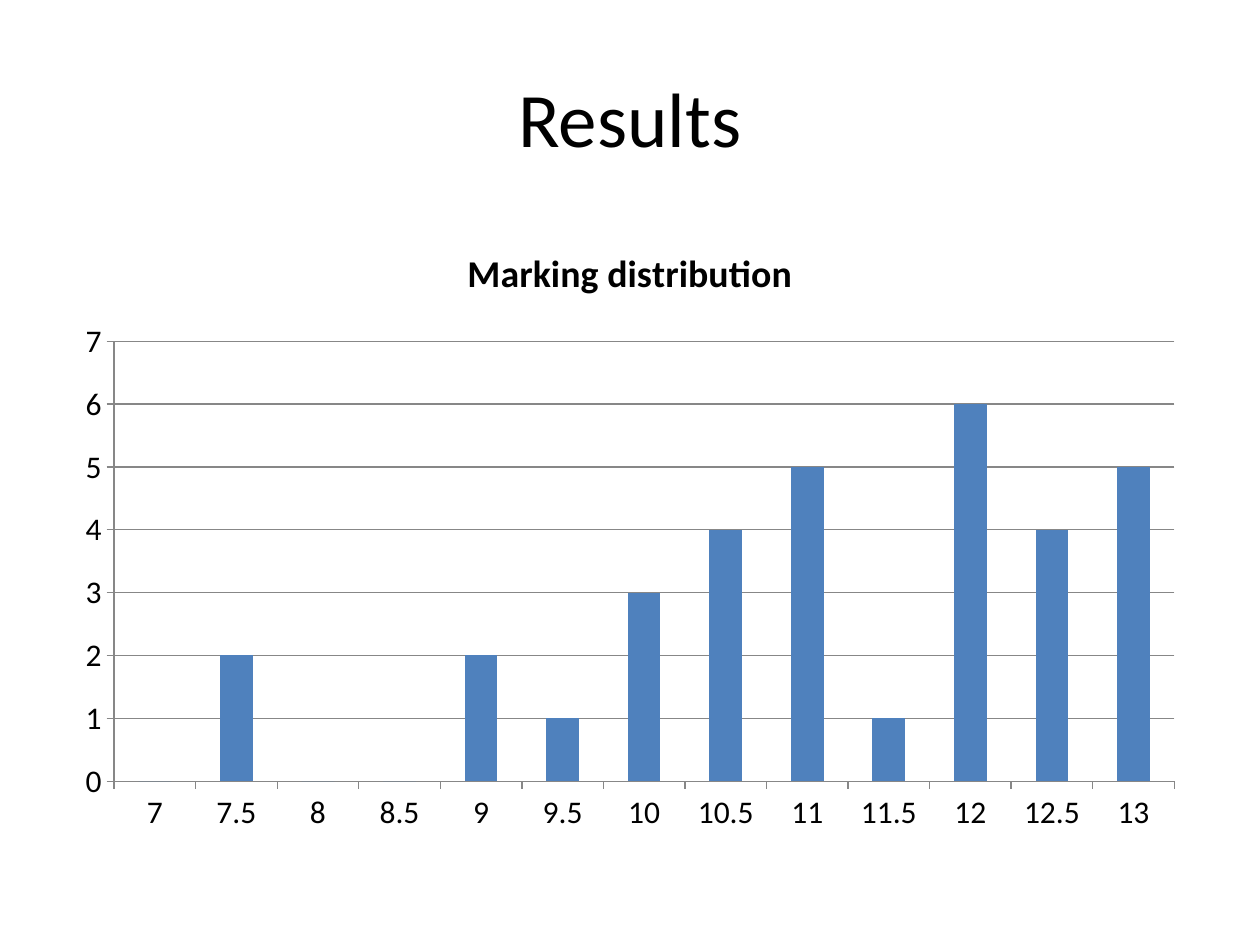
"""Build the results slide with its marking distribution chart."""
import pptx
import pptx.chart.data
import pptx.dml.color
import pptx.enum.chart
import pptx.enum.text
import pptx.util

Pt = pptx.util.Pt
TITLE = "Results"
CHART_TITLE = "Marking distribution"
MARKS = [
    ("7", 0), ("7.5", 2), ("8", 0), ("8.5", 0), ("9", 2), ("9.5", 1), ("10", 3),
    ("10.5", 4), ("11", 5), ("11.5", 1), ("12", 6), ("12.5", 4), ("13", 5),
]
COLORS = {"text": "000000", "bar": "4F81BD", "line": "878787"}
FONT = "Calibri"
MARGIN, WIDTH = 36, 648


def rgb(name):
    return pptx.dml.color.RGBColor.from_string(COLORS[name])


def style_font(font, size, bold=False):
    font.name = FONT
    font.size = Pt(size)
    font.bold = bold
    font.color.rgb = rgb("text")


def style_line(line):
    line.color.rgb = rgb("line")
    line.width = Pt(0.75)


def add_title(slide):
    sp = slide.shapes.add_textbox(Pt(MARGIN), Pt(21.6), Pt(WIDTH), Pt(90))
    tf = sp.text_frame
    tf.word_wrap = True
    tf.vertical_anchor = pptx.enum.text.MSO_ANCHOR.MIDDLE
    tf.text = TITLE
    p = tf.paragraphs[0]
    p.alignment = pptx.enum.text.PP_ALIGN.CENTER
    style_font(p.runs[0].font, 44)


def add_marks_chart(slide):
    data = pptx.chart.data.CategoryChartData()
    data.categories = [mark for mark, count in MARKS]
    data.add_series("Series 1", [count for mark, count in MARKS])
    chart = slide.shapes.add_chart(
        pptx.enum.chart.XL_CHART_TYPE.COLUMN_CLUSTERED,
        Pt(MARGIN), Pt(126), Pt(WIDTH), Pt(356.4), data,
    ).chart
    style_font(chart.font, 18)
    chart.has_legend = False
    chart.has_title = True
    tf = chart.chart_title.text_frame
    tf.text = CHART_TITLE
    style_font(tf.paragraphs[0].runs[0].font, 21.6, True)
    chart.chart_title.include_in_layout = False

    plot = chart.plots[0]
    plot.gap_width = 150
    plot.vary_by_categories = False
    fill = plot.series[0].format.fill
    fill.solid()
    fill.fore_color.rgb = rgb("bar")

    for axis in (chart.category_axis, chart.value_axis):
        axis.major_tick_mark = pptx.enum.chart.XL_TICK_MARK.OUTSIDE
        axis.minor_tick_mark = pptx.enum.chart.XL_TICK_MARK.NONE
        style_line(axis.format.line)
    axis = chart.value_axis
    axis.minimum_scale, axis.maximum_scale, axis.major_unit = 0, 7, 1
    axis.has_major_gridlines = True
    style_line(axis.major_gridlines.format.line)


def main():
    prs = pptx.Presentation()
    prs.slide_width, prs.slide_height = Pt(720), Pt(540)
    slide = prs.slides.add_slide(prs.slide_layouts[6])
    add_title(slide)
    add_marks_chart(slide)
    prs.save("out.pptx")


if __name__ == "__main__":
    main()
